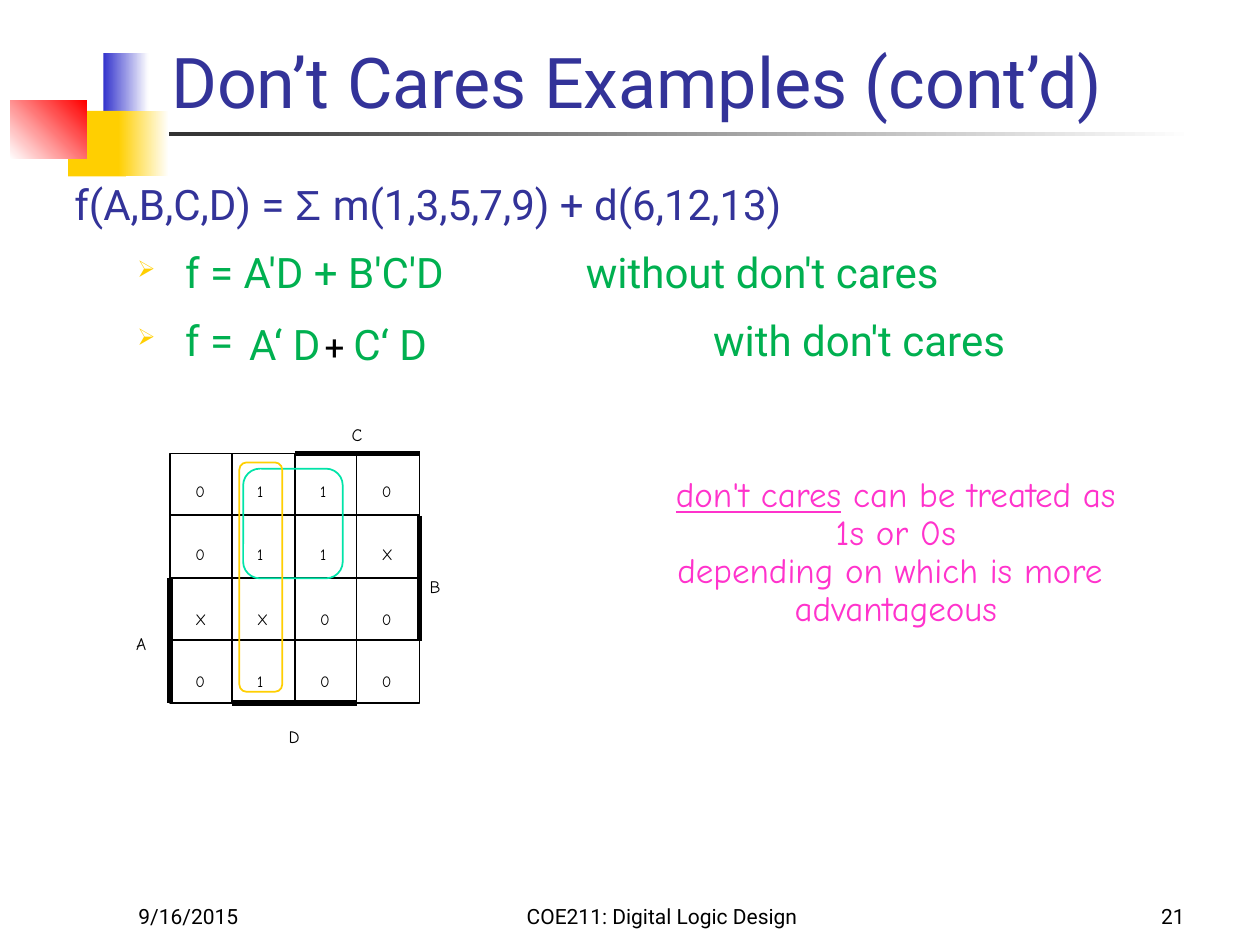
import pptx
import pptx.util
import pptx.dml.color
import pptx.enum.shapes
import pptx.enum.text
import pptx.oxml.ns
import lxml.etree

ALIGN = pptx.enum.text.PP_ALIGN
ANCHOR = pptx.enum.text.MSO_ANCHOR
SHAPE = pptx.enum.shapes.MSO_SHAPE
Pt = pptx.util.Pt
SANS, HAND = "Roboto", "Comic Neue"
NAVY, GREEN, PINK, GOLD, BLACK, WHITE = "333399", "00B050", "FF33CC", "FFCF01", "000000", "FFFFFF"
FULL, TIGHT = (0.1, 0.05), (0.02, 0.03)

DECORATIONS = [
    ((0.48, 1.05, 9, 0.03), ("1C1C1C", WHITE), 0),
    ((0.82, 0.42, 0.36, 0.52), ("3333CC", WHITE), 0),
    ((0.54, 0.88, 0.46, 0.52), (GOLD,), 0),
    ((0.94, 0.88, 0.4, 0.52), (GOLD, WHITE), 0),
    ((0.08, 0.8, 0.61, 0.46), (WHITE, "FF0000"), 45),
]
TITLE = "Don’t Cares Examples (cont’d)"
FOOTERS = [
    ("9/16/2015", 1, 2.08, ALIGN.LEFT),
    ("COE211: Digital Logic Design", 3.67, 3.17, ALIGN.CENTER),
    ("21", 7.42, 2.08, ALIGN.RIGHT),
]
FUNCTION = [("f(A,B,C,D) = ", SANS), ("Σ ", "Arial"), ("m(1,3,5,7,9) + d(6,12,13)", SANS)]
SOLUTIONS = [("f = A'D + B'C'D\twithout don't cares", 4.06), ("f = \twith don't cares", 5.07)]
TERMS = [
    ((1.88, 2.48, 0.8, 0.5), [("A‘ D", 24, GREEN)]),
    ((2.41, 2.48, 1.18, 0.5), [(" + ", 20, BLACK), ("C‘ D", 24, GREEN)]),
]
NOTE = ["don't cares", " can be treated as", "1s or 0s", "depending on which is more ", "advantageous"]
MAP_ROWS = ["0110", "011X", "XX00", "0100"]
MAP_LEFT, MAP_TOP, CELL = 1.35, 3.6, 0.49
HALF = 0.99
VARIABLE_BARS = [(2, 0, 4, 0), (4, 1, 4, 3), (1, 4, 3, 4), (0, 2, 0, 4)]
VARIABLES = [("A", 1.06, 4.94), ("B", 3.39, 4.49), ("C", 2.77, 3.28), ("D", 2.27, 5.68)]
LOOPS = [((1.93, 3.72, 0.79, 0.87), "00E4A8"), ((1.9, 3.67, 0.34, 1.82), GOLD)]


def color(value):
    return pptx.dml.color.RGBColor.from_string(value)


def inches(values):
    return [pptx.util.Inches(value) for value in values]


def add_box(slide, place, margins=FULL, anchor=ANCHOR.TOP, wrap=True):
    frame = slide.shapes.add_textbox(*inches(place)).text_frame
    frame.margin_left = frame.margin_right = pptx.util.Inches(margins[0])
    frame.margin_top = frame.margin_bottom = pptx.util.Inches(margins[1])
    frame.vertical_anchor = anchor
    frame.word_wrap = wrap
    return frame


def add_run(paragraph, text, size, fill, font=SANS):
    run = paragraph.add_run()
    run.text = text
    run.font.size = Pt(size)
    run.font.name = font
    run.font.color.rgb = color(fill)
    return run


def add_property(paragraph, tag, **attributes):
    properties = paragraph._p.get_or_add_pPr()
    child = lxml.etree.SubElement(properties, pptx.oxml.ns.qn(tag))
    for name, value in attributes.items():
        child.set(name, str(value))
    return child


def add_tab(paragraph, position):
    tabs = add_property(paragraph, "a:tabLst")
    stop = lxml.etree.SubElement(tabs, pptx.oxml.ns.qn("a:tab"))
    stop.set("pos", str(pptx.util.Inches(position)))
    stop.set("algn", "l")


def add_outline(slide, kind, place, line):
    shape = slide.shapes.add_shape(kind, *inches(place))
    shape.shadow.inherit = False
    shape.fill.background()
    shape.line.color.rgb = color(line)
    shape.line.width = Pt(1)
    return shape


def add_line(slide, ends, width):
    line = slide.shapes.add_connector(pptx.enum.shapes.MSO_CONNECTOR.STRAIGHT, *inches(ends))
    line.line.color.rgb = color(BLACK)
    line.line.width = Pt(width)
    lxml.etree.SubElement(line._element.spPr, pptx.oxml.ns.qn("a:effectLst"))


def add_frame(slide):
    for place, colors, angle in DECORATIONS:
        shape = slide.shapes.add_shape(SHAPE.RECTANGLE, *inches(place))
        shape.shadow.inherit = False
        shape.line.fill.background()
        if len(colors) == 1:
            shape.fill.solid()
            shape.fill.fore_color.rgb = color(colors[0])
        else:
            shape.fill.gradient()
            shape.fill.gradient_angle = angle
            for stop, value in zip(shape.fill.gradient_stops, colors):
                stop.color.rgb = color(value)
    title = add_box(slide, (1.26, 0.08, 8.52, 0.94), anchor=ANCHOR.BOTTOM)
    add_run(title.paragraphs[0], TITLE, 40, NAVY)
    for text, left, width, alignment in FOOTERS:
        paragraph = add_box(slide, (left, 6.92, width, 0.5), anchor=ANCHOR.BOTTOM).paragraphs[0]
        paragraph.alignment = alignment
        add_run(paragraph, text, 12, BLACK)


def add_equations(slide):
    frame = add_box(slide, (0.59, 1.46, 8.58, 1.2), (0, 0))
    paragraph = frame.paragraphs[0]
    paragraph.line_spacing = 0.9
    for text, font in FUNCTION:
        add_run(paragraph, text, 24, NAVY, font)
    for text, stop in SOLUTIONS:
        paragraph = frame.add_paragraph()
        paragraph.level = 1
        paragraph.line_spacing = 0.9
        paragraph.space_before = Pt(13)
        properties = paragraph._p.get_or_add_pPr()
        properties.set("marL", str(pptx.util.Inches(0.88)))
        properties.set("indent", str(pptx.util.Inches(-0.38)))
        bullet_color = add_property(paragraph, "a:buClr")
        lxml.etree.SubElement(bullet_color, pptx.oxml.ns.qn("a:srgbClr")).set("val", GOLD)
        add_property(paragraph, "a:buSzPct", val=55000)
        add_property(paragraph, "a:buChar", char="➢")
        add_tab(paragraph, stop)
        add_run(paragraph, text, 24, GREEN)
    for place, runs in TERMS:
        paragraph = add_box(slide, place, wrap=False).paragraphs[0]
        for text, size, fill in runs:
            add_run(paragraph, text, size, fill)


def add_note(slide):
    paragraph = add_box(slide, (5.27, 3.75, 3.68, 1.62), TIGHT, wrap=False).paragraphs[0]
    paragraph.alignment = ALIGN.CENTER
    paragraph.line_spacing = Pt(21.8)
    for index, text in enumerate(NOTE):
        if index > 1:
            paragraph.add_line_break()
        add_run(paragraph, text, 20, PINK, HAND).font.underline = index == 0


def add_quadrant(slide, column, row):
    left, top = MAP_LEFT + column * HALF, MAP_TOP + row * HALF
    add_outline(slide, SHAPE.RECTANGLE, (left, top, HALF, HALF), BLACK)
    add_line(slide, (left + CELL, top, left + CELL, top + HALF), 1)
    add_line(slide, (left, top + CELL, left + HALF, top + CELL), 1)
    frame = add_box(slide, (left + 0.18, top + 0.1 + 0.02 * row, 0.89, 0.88), TIGHT, wrap=False)
    for index, values in enumerate(MAP_ROWS[2 * row:2 * row + 2]):
        paragraph = frame.add_paragraph() if index else frame.paragraphs[0]
        paragraph.line_spacing = Pt(17.8)
        if index:
            paragraph.space_before = Pt(17.8)
        add_tab(paragraph, CELL)
        add_run(paragraph, "\t".join(values[2 * column:2 * column + 2]), 9, BLACK, HAND)


def add_map(slide):
    for row in range(2):
        for column in range(2):
            add_quadrant(slide, column, row)
    for x1, y1, x2, y2 in VARIABLE_BARS:
        step = HALF / 2
        add_line(slide, (MAP_LEFT + x1 * step, MAP_TOP + y1 * step,
                         MAP_LEFT + x2 * step, MAP_TOP + y2 * step), 3)
    for name, left, top in VARIABLES:
        paragraph = add_box(slide, (left, top, 0.26, 0.36), TIGHT, wrap=False).paragraphs[0]
        paragraph.line_spacing = Pt(15.8)
        add_run(paragraph, name, 10, BLACK, HAND)
    for place, line in LOOPS:
        add_outline(slide, SHAPE.ROUNDED_RECTANGLE, place, line)


def main():
    """Build the slide on don't-care examples and save it."""
    presentation = pptx.Presentation()
    presentation.slide_width, presentation.slide_height = inches((10, 7.5))
    slide = presentation.slides.add_slide(presentation.slide_layouts[6])
    for add_part in (add_frame, add_equations, add_note, add_map):
        add_part(slide)
    presentation.save("out.pptx")


if __name__ == "__main__":
    main()
